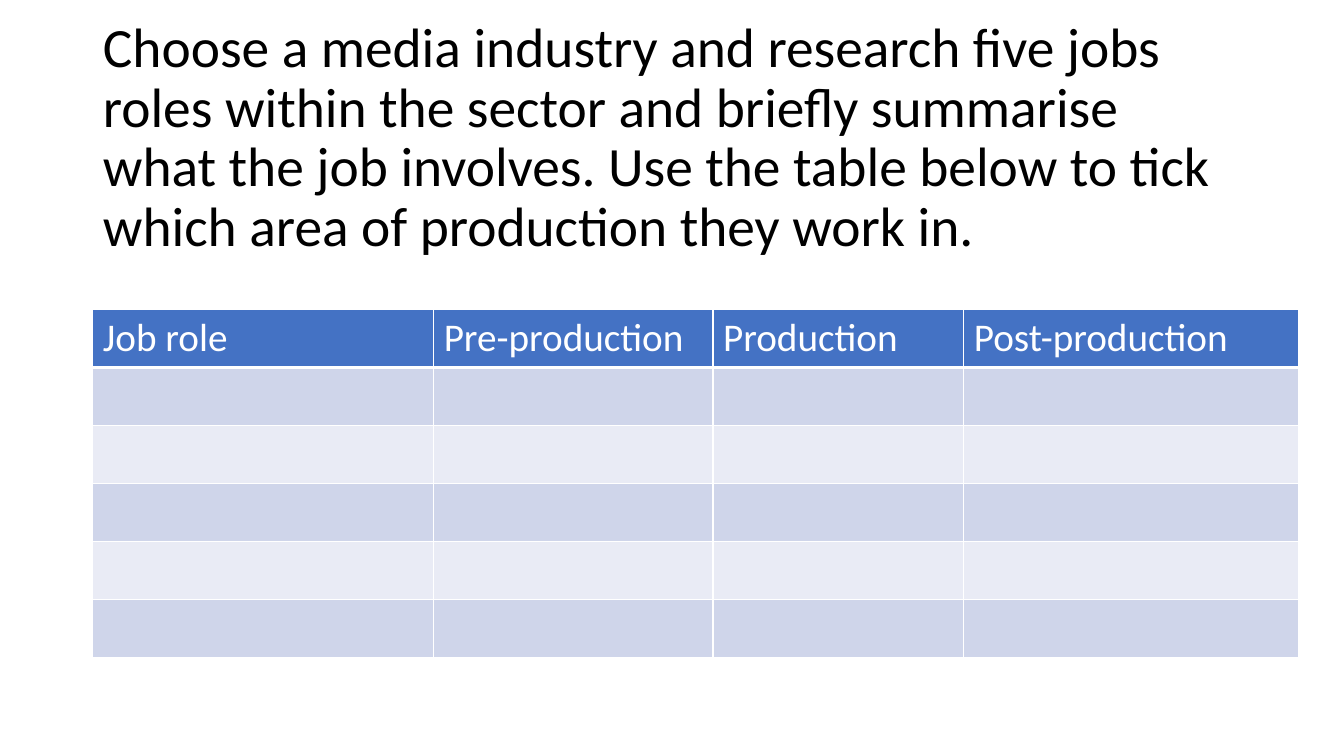
from lxml.etree import SubElement
from pptx import Presentation
from pptx.dml.color import RGBColor
from pptx.enum.text import MSO_ANCHOR, MSO_AUTO_SIZE, PP_ALIGN
from pptx.oxml.ns import qn
from pptx.util import Cm, Pt

COLOURS = {
    "text": "000000",
    "white": "FFFFFF",
    "header": "4472C4",
    "dark band": "CFD5EA",
    "light band": "E9EBF5",
}
TITLE = (
    "Choose a media industry and research five jobs roles within the sector "
    "and briefly summarise what the job involves. Use the table below to tick "
    "which area of production they work in."
)
COLUMNS = {
    "Job role": 8.59,
    "Pre-production": 7.04,
    "Production": 6.32,
    "Post-production": 8.43,
}
JOB_COUNT = 5


class JobPage:
    """Holds the style and the current slide."""

    font_name = "Calibri"
    row_height = 1.46

    def __init__(self, deck):
        """Add a title-only slide to the deck."""
        self.page = deck.slides.add_slide(deck.slide_layouts[5])

    def colour(self, name):
        """Return the named colour."""
        return RGBColor.from_string(COLOURS[name])

    def style(self, para, size, colour):
        """Set the font of a paragraph."""
        para.font.name = self.font_name
        para.font.size = Pt(size)
        para.font.bold = False
        para.font.color.rgb = self.colour(colour)
        para.alignment = PP_ALIGN.LEFT

    def title(self, text, left, top, width, height):
        """Place and fill the title."""
        box = self.page.shapes.title
        box.left, box.top = Cm(left), Cm(top)
        box.width, box.height = Cm(width), Cm(height)
        frame = box.text_frame
        frame.text = text
        frame.word_wrap = True
        frame.auto_size = MSO_AUTO_SIZE.NONE
        frame.vertical_anchor = MSO_ANCHOR.MIDDLE
        para = frame.paragraphs[0]
        para.line_spacing = 0.9
        self.style(para, 39.6, "text")

    def borders(self, cell, bottom):
        """Draw white lines around a cell."""
        properties = cell._tc.get_or_add_tcPr()
        for side, width in zip("LRTB", (1, 1, 1, bottom)):
            line = SubElement(properties, qn(f"a:ln{side}"), w=str(Pt(width)))
            fill = SubElement(line, qn("a:solidFill"))
            SubElement(fill, qn("a:srgbClr"), val=COLOURS["white"])

    def table(self, columns, job_count, left, top):
        """Add a banded table with a header and one row per job."""
        row_count = job_count + 1
        table = self.page.shapes.add_table(
            row_count, len(columns), Cm(left), Cm(top),
            Cm(sum(columns.values())), Cm(self.row_height * row_count),
        ).table
        for column, (heading, width) in zip(table.columns, columns.items()):
            column.width = Cm(width)
        for cell, heading in zip(table.rows[0].cells, columns):
            cell.text = heading
        for index, row in enumerate(table.rows):
            row.height = Cm(self.row_height)
            band = "dark band" if index % 2 else "light band"
            for cell in row.cells:
                self.borders(cell, 1 if index else 3)
                cell.fill.solid()
                cell.fill.fore_color.rgb = self.colour(band if index else "header")
                self.style(cell.text_frame.paragraphs[0], 28,
                           "text" if index else "white")


def main():
    """Build the deck."""
    deck = Presentation()
    deck.slide_width, deck.slide_height = Cm(33.87), Cm(19.05)
    page = JobPage(deck)
    page.title(TITLE, 2.34, 0.56, 29.21, 5.89)
    page.table(COLUMNS, JOB_COUNT, 2.34, 7.8)
    deck.save("out.pptx")


if __name__ == "__main__":
    main()
